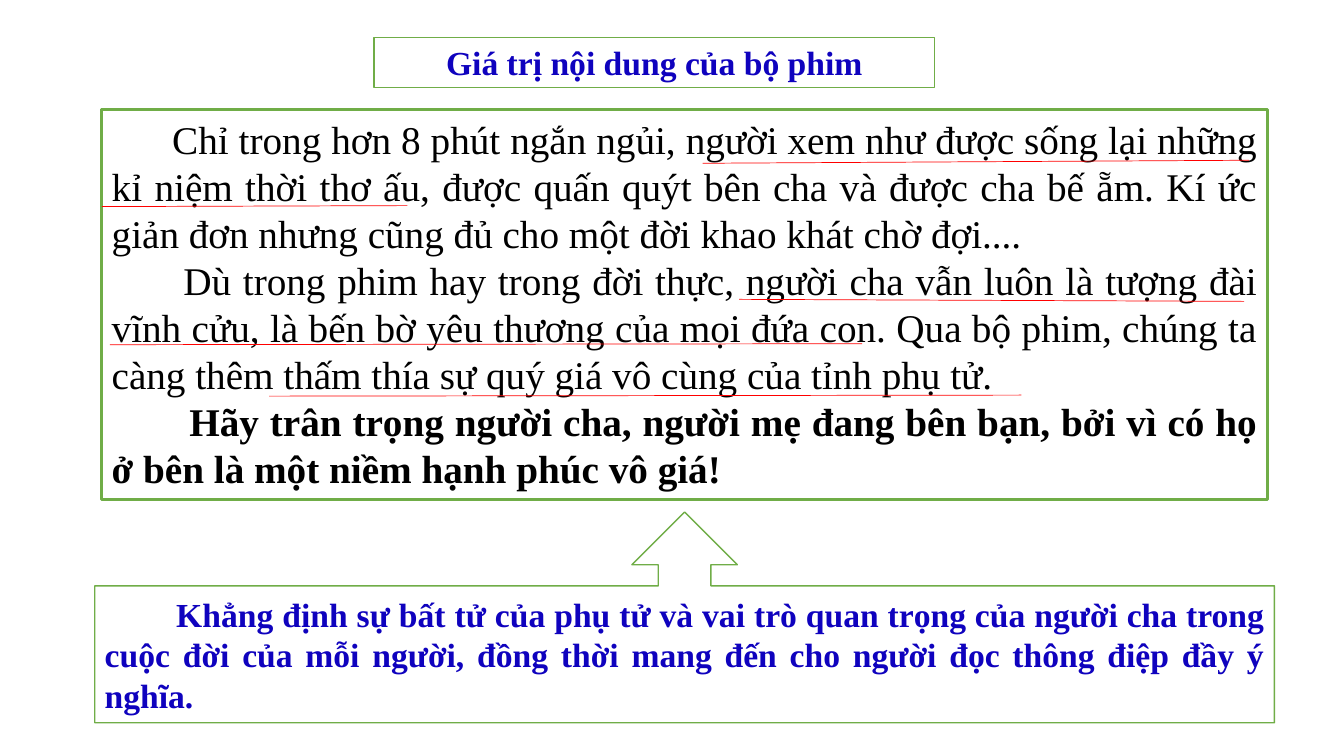
from lxml import etree
from pptx import Presentation
from pptx.dml.color import RGBColor
from pptx.enum.shapes import MSO_CONNECTOR, MSO_SHAPE
from pptx.enum.text import MSO_ANCHOR, MSO_AUTO_SIZE, PP_ALIGN
from pptx.oxml.ns import qn
from pptx.util import Inches, Pt

WHITE = RGBColor(0xFF, 0xFF, 0xFF)
BLACK = RGBColor(0x00, 0x00, 0x00)
GREEN = RGBColor(0x70, 0xAD, 0x47)
BLUE = RGBColor(0x0F, 0x02, 0xBE)
RED = RGBColor(0xFF, 0x00, 0x00)
FONT = "Times New Roman"

CENTER, JUSTIFY = PP_ALIGN.CENTER, PP_ALIGN.JUSTIFY
TOP, MIDDLE = MSO_ANCHOR.TOP, MSO_ANCHOR.MIDDLE
RECTANGLE, UP_CALLOUT = MSO_SHAPE.RECTANGLE, MSO_SHAPE.UP_ARROW_CALLOUT
STRAIGHT = MSO_CONNECTOR.STRAIGHT

TITLE = "Giá trị nội dung của bộ phim"
# Text, first-line indent in inches, bold
REVIEW = [
    ("Chỉ trong hơn 8 phút ngắn ngủi, người xem như được sống lại những kỉ niệm "
     "thời thơ ấu, được quấn quýt bên cha và được cha bế ẵm. Kí ức giản đơn nhưng "
     "cũng đủ cho một đời khao khát chờ đợi....", 0.6, False),
    ("Dù trong phim hay trong đời thực, người cha vẫn luôn là tượng đài vĩnh cửu, "
     "là bến bờ yêu thương của mọi đứa con. Qua bộ phim, chúng ta càng thêm thấm "
     "thía sự quý giá vô cùng của tỉnh phụ tử.", 0.71, False),
    ("Hãy trân trọng người cha, người mẹ đang bên bạn, bởi vì có họ ở bên là một "
     "niềm hạnh phúc vô giá!", 0.77, True),
]
MESSAGE = [
    ("Khẳng định sự bất tử của phụ tử và vai trò quan trọng của người cha trong "
     "cuộc đời của mỗi người, đồng thời mang đến cho người đọc thông điệp đầy ý "
     "nghĩa.", 0.71, True),
]
# Start and end of each underline, in inches from the review box's corner
UNDERLINES = [
    (5.96, 0.53, 11.38, 0.5),
    (0, 0.96, 3.03, 0.95),
    (6.32, 1.88, 11.33, 1.9),
    (0.08, 2.33, 7.54, 2.32),
    (1.66, 2.84, 9.12, 2.83),
]


def style_frame(shape, line_width, anchor):
    shape.fill.solid()
    shape.fill.fore_color.rgb = WHITE
    shape.line.color.rgb = GREEN
    shape.line.width = Pt(line_width)
    frame = shape.text_frame
    frame.word_wrap = True
    frame.auto_size = MSO_AUTO_SIZE.NONE
    frame.vertical_anchor = anchor


def style_paragraph(paragraph, size, color, bold, alignment):
    paragraph.alignment = alignment
    paragraph.line_spacing = 1.0
    paragraph.space_before = Pt(0)
    paragraph.font.name = FONT
    paragraph.font.size = Pt(size)
    paragraph.font.color.rgb = color
    paragraph.font.bold = bold


def place_title(slide, left, top, width, height):
    title = slide.shapes.title
    title.left, title.top = Inches(left), Inches(top)
    title.width, title.height = Inches(width), Inches(height)
    title.text = TITLE
    style_frame(title, 1, MIDDLE)
    style_paragraph(title.text_frame.paragraphs[0], 24, BLUE, True, CENTER)


def add_passage(slide, preset, box, passages, size, color, line_width, anchor):
    """Add a framed shape holding justified paragraphs with first-line indents."""
    panel = slide.shapes.add_shape(preset, *map(Inches, box))
    panel.shadow.inherit = False
    style_frame(panel, line_width, anchor)
    frame = panel.text_frame
    for index, (text, indent, bold) in enumerate(passages):
        paragraph = frame.add_paragraph() if index else frame.paragraphs[0]
        paragraph.text = text
        style_paragraph(paragraph, size, color, bold, JUSTIFY)
        properties = paragraph._p.get_or_add_pPr()
        properties.set("marL", "0")
        properties.set("indent", str(Inches(indent)))


def add_underlines(slide, left, top):
    for x1, y1, x2, y2 in UNDERLINES:
        underline = slide.shapes.add_connector(
            STRAIGHT, Inches(left + x1), Inches(top + y1),
            Inches(left + x2), Inches(top + y2))
        underline.line.color.rgb = RED
        underline.line.width = Pt(0.5)
        etree.SubElement(underline._element.spPr, qn("a:effectLst"))


def build_film_value_slide(presentation):
    slide = presentation.slides.add_slide(presentation.slide_layouts[5])
    review_box = (1.01, 1.09, 11.56, 3.87)
    place_title(slide, 3.71, 0.37, 5.56, 0.5)
    add_passage(slide, RECTANGLE, review_box, REVIEW, 28, BLACK, 2.25, TOP)
    add_passage(slide, UP_CALLOUT, (0.94, 5.08, 11.7, 2.09), MESSAGE,
                24, BLUE, 1, MIDDLE)
    add_underlines(slide, *review_box[:2])


def main():
    presentation = Presentation()
    presentation.slide_width = Inches(13.33)
    presentation.slide_height = Inches(7.5)
    build_film_value_slide(presentation)
    presentation.save("out.pptx")


if __name__ == "__main__":
    main()
